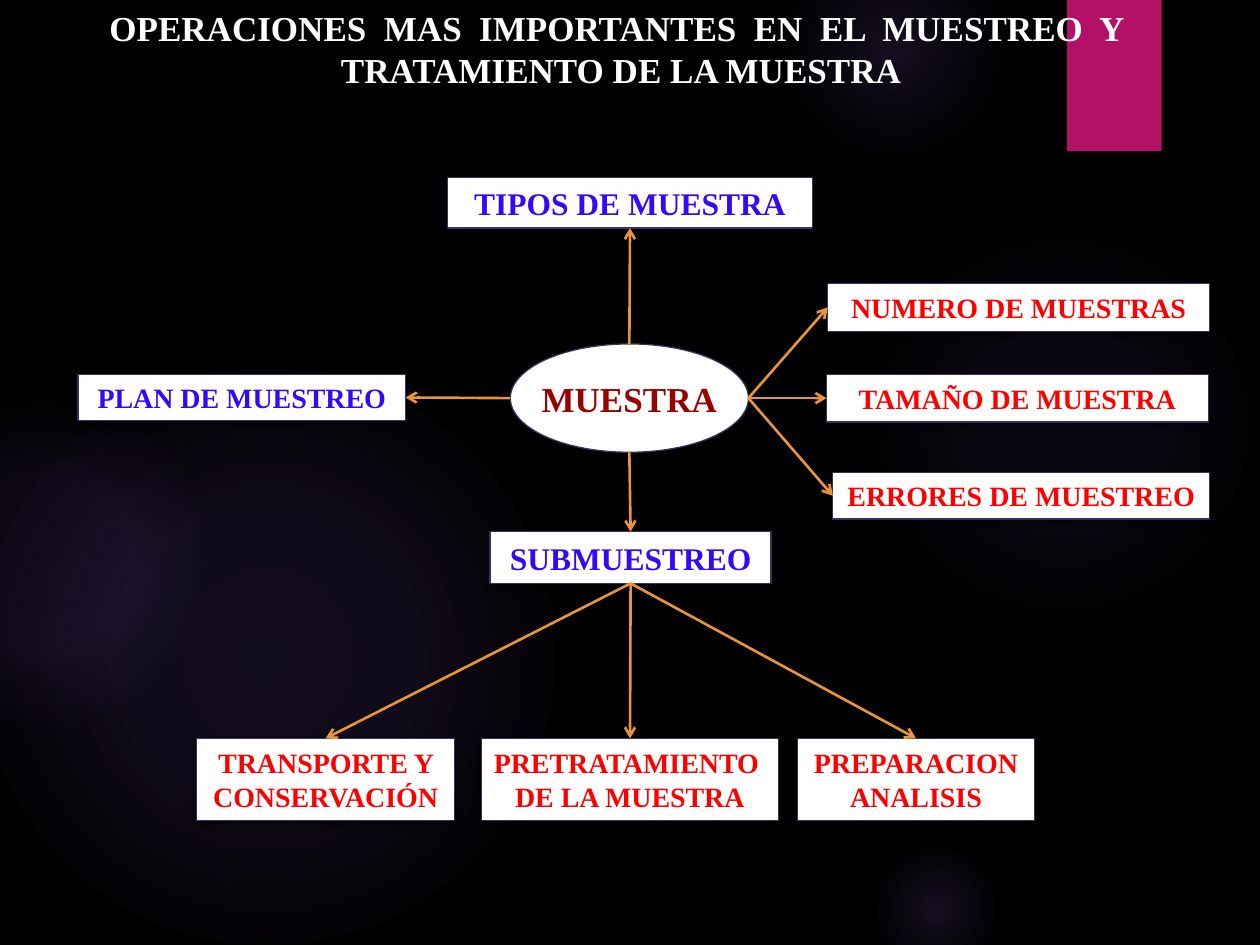
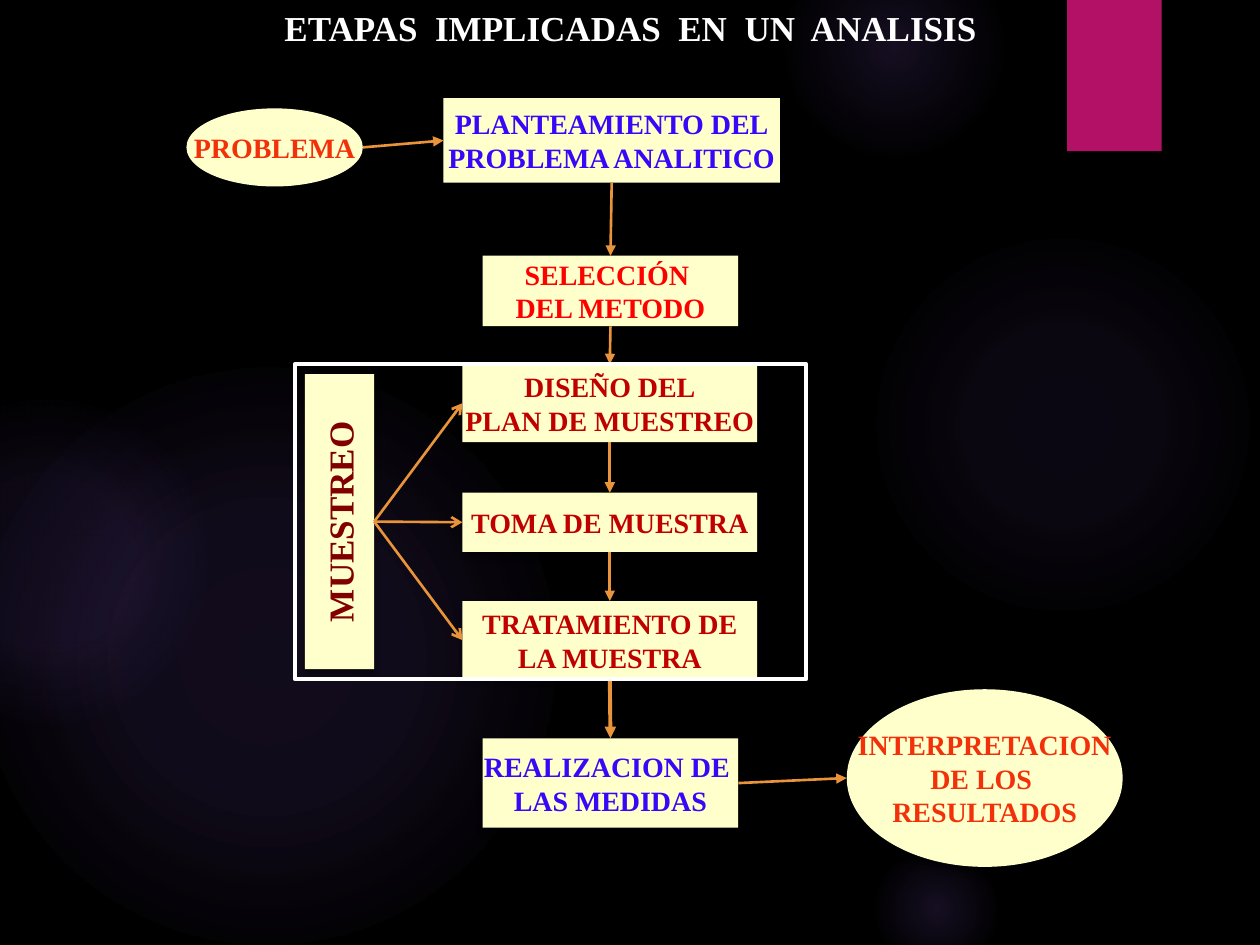
from dataclasses import dataclass
from typing import Any, NamedTuple, Optional

from lxml import etree
from pptx import Presentation
from pptx.dml.color import RGBColor
from pptx.enum import shapes as kinds, text as texts
from pptx.oxml import parse_xml
from pptx.oxml.ns import nsdecls, qn
from pptx.util import Inches, Pt

BLACK = RGBColor(0x00, 0x00, 0x00)
WHITE = RGBColor(0xFF, 0xFF, 0xFF)
CREAM = RGBColor(0xFF, 0xFF, 0xCC)
PINK = RGBColor(0xB3, 0x11, 0x66)
GLOW = RGBColor(0x9B, 0x6B, 0xF2)
EDGE = RGBColor(0x3B, 0x30, 0x59)
AMBER = RGBColor(0xE9, 0x94, 0x3A)
BLUE = RGBColor(0x36, 0x08, 0xF8)
RED = RGBColor(0xFF, 0x00, 0x00)
BRICK = RGBColor(0xC0, 0x00, 0x00)
ORANGE = RGBColor(0xF2, 0x31, 0x0A)
WINE = RGBColor(0x99, 0x00, 0x00)
MAROON = RGBColor(0x80, 0x00, 0x00)

FONT = "Times New Roman"
RECT = kinds.MSO_SHAPE.RECTANGLE
OVAL = kinds.MSO_SHAPE.OVAL


class Orb(NamedTuple):
    left: float
    top: float
    size: float
    stops: tuple[tuple[int, int], ...]


@dataclass(frozen=True)
class Node:
    words: str
    left: float
    top: float
    width: float
    height: float
    ink: RGBColor
    size: int = 16
    form: Any = RECT
    wrap: bool = False
    turn: int = 0
    cast: Optional[int] = 90

    def side(self, name: str) -> tuple[float, float]:
        across, down = {"top": (0.5, 0), "left": (0, 0.5),
                        "bottom": (0.5, 1), "right": (1, 0.5)}[name]
        return self.left + across * self.width, self.top + down * self.height


class Link(NamedTuple):
    start: str
    leave: str
    end: str
    reach: str
    head: str = "arrow"
    weight: float = 1.5


ORBS = (
    Orb(6.89, 1.83, 3.08, ((0, 7), (36, 6), (69, 0))),
    Orb(6.22, -0.5, 1.75, ((0, 14), (36, 7), (73, 0))),
    Orb(6.89, 6.67, 1.08, ((0, 14), (36, 7), (66, 0))),
    Orb(-0.17, 2.92, 4.58, ((0, 11), (36, 10), (75, 0))),
    Orb(-0.92, 3.17, 2.58, ((0, 8), (36, 8), (72, 0))),
)

SAMPLE = {
    "sub": Node("SUBMUESTREO", 3.89, 4.22, 2.23, 0.41, BLUE, 18),
    "count": Node("NUMERO DE MUESTRAS", 6.57, 2.25, 3.03, 0.38, RED, wrap=True),
    "size": Node("TAMAÑO DE MUESTRA", 6.56, 2.97, 3.03, 0.38, RED, wrap=True),
    "error": Node("ERRORES DE MUESTREO", 6.61, 3.75, 2.99, 0.37, RED, wrap=True),
    "prep": Node("PREPARACION ANALISIS", 6.33, 5.86, 1.88, 0.65, RED,
                 wrap=True, cast=180),
    "move": Node("TRANSPORTE Y CONSERVACIÓN", 1.56, 5.86, 2.05, 0.65, RED, wrap=True),
    "types": Node("TIPOS DE MUESTRA", 3.55, 1.41, 2.9, 0.4, BLUE, 18, wrap=True),
    "plan": Node("PLAN DE MUESTREO", 0.62, 2.97, 2.6, 0.37, BLUE, wrap=True),
    "core": Node("MUESTRA", 4.05, 2.73, 1.89, 0.86, WINE, 20, OVAL, cast=None),
    "treat": Node("PRETRATAMIENTO  DE LA MUESTRA", 3.82, 5.86, 2.36, 0.65, RED,
                  wrap=True, cast=180),
}
SAMPLE_LINKS = [
    Link("core", "top", "types", "bottom"),
    Link("core", "bottom", "sub", "top"),
    Link("core", "left", "plan", "right"),
    *(Link("core", "right", end, "left") for end in ("count", "size", "error")),
    *(Link("sub", "bottom", end, "top") for end in ("treat", "move", "prep")),
]

STAGES = {
    "issue": Node("PROBLEMA", 1.48, 0.86, 1.4, 0.62, ORANGE, form=OVAL, cast=45),
    "frame": Node("PLANTEAMIENTO DEL\nPROBLEMA ANALITICO",
                  3.52, 0.78, 2.67, 0.67, BLUE, cast=45),
    "method": Node("SELECCIÓN \nDEL METODO", 3.83, 2.03, 2.03, 0.56, RED, cast=45),
    "tests": Node("REALIZACION DE \nLAS MEDIDAS", 3.83, 5.86, 2.03, 0.71, BLUE),
    "plan": Node("DISEÑO DEL\nPLAN DE MUESTREO",
                 3.67, 2.89, 2.34, 0.62, BRICK, cast=45),
    "take": Node("TOMA DE MUESTRA", 3.67, 3.91, 2.34, 0.47, BRICK, cast=45),
    "treat": Node("TRATAMIENTO DE\nLA MUESTRA", 3.67, 4.77, 2.34, 0.62, BRICK, cast=45),
    "result": Node("INTERPRETACION\nDE LOS \nRESULTADOS",
                   6.72, 5.47, 2.19, 1.41, ORANGE, form=OVAL),
    "group": Node("MUESTREO", 2.42, 2.97, 0.55, 2.34, MAROON, 20, turn=270),
}
STAGE_LINKS = [
    Link("issue", "right", "frame", "left", "triangle"),
    Link("tests", "right", "result", "left", "triangle"),
    *(Link(start, "bottom", end, "top", "triangle", weight)
      for start, end, weight in (("frame", "method", 1.5), ("method", "plan", 1.5),
                                 ("plan", "take", 1.5), ("take", "treat", 1.5),
                                 ("treat", "tests", 2.25))),
    *(Link("group", "right", end, "left") for end in ("plan", "take", "treat")),
]


def apply(target: Any, values: dict[str, Any]) -> None:
    for name, value in values.items():
        setattr(target, name, value)


def shade(blur: float, gap: float, angle: int, tint: RGBColor, alpha: int) -> Any:
    return parse_xml(
        f'<a:outerShdw {nsdecls("a")} blurRad="{Pt(blur)}" dist="{Pt(gap)}" '
        f'dir="{angle * 60000}" algn="ctr" rotWithShape="0"><a:srgbClr val="{tint}">'
        f'<a:alpha val="{alpha * 1000}"/></a:srgbClr></a:outerShdw>')


def shape(slide: Any, form: Any, box: tuple[float, ...], fill: Optional[RGBColor],
          edge: Optional[RGBColor] = None, weight: float = 0.75,
          cast: Optional[int] = None) -> Any:
    item = slide.shapes.add_shape(form, *map(Inches, box))
    item.shadow.inherit = False
    if fill is None:
        item.fill.background()
    else:
        item.fill.solid()
        item.fill.fore_color.rgb = fill
    if edge is None:
        item.line.fill.background()
    else:
        item.line.color.rgb = edge
        item.line.width = Pt(weight)
    if cast is not None:
        item._element.spPr.find(qn("a:effectLst")).append(
            shade(4, 3, cast, BLACK, 40))
    return item


def write(item: Any, words: str, size: int, ink: RGBColor, wrap: bool,
          anchor: Any = texts.MSO_ANCHOR.MIDDLE) -> None:
    frame = item.text_frame
    frame.text = words
    apply(frame, {"word_wrap": wrap, "vertical_anchor": anchor})
    for para in frame.paragraphs:
        para.alignment = texts.PP_ALIGN.CENTER
        for run in para.runs:
            apply(run.font, {"name": FONT, "size": Pt(size), "bold": True})
            run.font.color.rgb = ink


def glow(slide: Any, orb: Orb) -> None:
    item = shape(slide, OVAL, (orb.left, orb.top, orb.size, orb.size), GLOW)
    stops = "".join(
        f'<a:gs pos="{place * 1000}"><a:srgbClr val="{GLOW}">'
        f'<a:alpha val="{alpha * 1000}"/></a:srgbClr></a:gs>'
        for place, alpha in orb.stops)
    blend = parse_xml(
        f'<a:gradFill {nsdecls("a")}><a:gsLst>{stops}</a:gsLst><a:path path="circle">'
        '<a:fillToRect l="50000" t="50000" r="50000" b="50000"/></a:path></a:gradFill>')
    props = item._element.spPr
    props.replace(props.find(qn("a:solidFill")), blend)


def draw(slide: Any, node: Node, fill: RGBColor, edge: Optional[RGBColor]) -> None:
    left, top, width, height = node.left, node.top, node.width, node.height
    if node.turn:
        shift = (width - height) / 2
        left, top, width, height = left + shift, top - shift, height, width
    item = shape(slide, node.form, (left, top, width, height), fill, edge,
                 cast=node.cast)
    item.rotation = node.turn
    write(item, node.words, node.size, node.ink, node.wrap)


def join(slide: Any, nodes: dict[str, Node], link: Link) -> None:
    start = nodes[link.start].side(link.leave)
    end = nodes[link.end].side(link.reach)
    item = slide.shapes.add_connector(
        kinds.MSO_CONNECTOR.STRAIGHT, *map(Inches, (*start, *end)))
    item.line.color.rgb = AMBER
    item.line.width = Pt(link.weight)
    props = item._element.spPr
    etree.SubElement(props.find(qn("a:ln")), qn("a:tailEnd"), type=link.head)
    etree.SubElement(props, qn("a:effectLst"))


def title(slide: Any, words: str, box: tuple[float, ...]) -> None:
    item = slide.shapes.add_textbox(*map(Inches, box))
    write(item, words, 20, WHITE, True, texts.MSO_ANCHOR.TOP)
    props = item.text_frame.paragraphs[0].runs[0].font._element
    effect = parse_xml(f'<a:effectLst {nsdecls("a")}/>')
    effect.append(shade(0, 2, 45, EDGE, 100))
    props.find(qn("a:solidFill")).addnext(effect)


def build(deck: Any, words: str, box: tuple[float, ...], nodes: dict[str, Node],
          links: list[Link], fill: RGBColor, edge: Optional[RGBColor] = None) -> Any:
    slide = deck.slides.add_slide(deck.slide_layouts[6])
    for orb in ORBS:
        glow(slide, orb)
    shape(slide, RECT, (8.47, 0, 0.75, 1.2), PINK, cast=90)
    title(slide, words, box)
    for node in nodes.values():
        draw(slide, node, fill, edge)
    for link in links:
        join(slide, nodes, link)
    return slide


def main() -> None:
    deck = Presentation()
    apply(deck, {"slide_width": Inches(10), "slide_height": Inches(7.5)})
    back = deck.slide_master.background.fill
    back.solid()
    back.fore_color.rgb = BLACK
    build(deck, "OPERACIONES  MAS  IMPORTANTES  EN  EL  MUESTREO  Y  "
          "TRATAMIENTO DE LA MUESTRA", (0, 0, 9.86, 0.77),
          SAMPLE, SAMPLE_LINKS, WHITE, EDGE)
    slide = build(deck, "ETAPAS  IMPLICADAS  EN  UN  ANALISIS",
                  (0.38, 0, 9.25, 0.44), STAGES, STAGE_LINKS, CREAM)
    shape(slide, RECT, (2.34, 2.89, 4.06, 2.5), None, WHITE, 2.25)
    deck.save("out.pptx")


if __name__ == "__main__":
    main()
